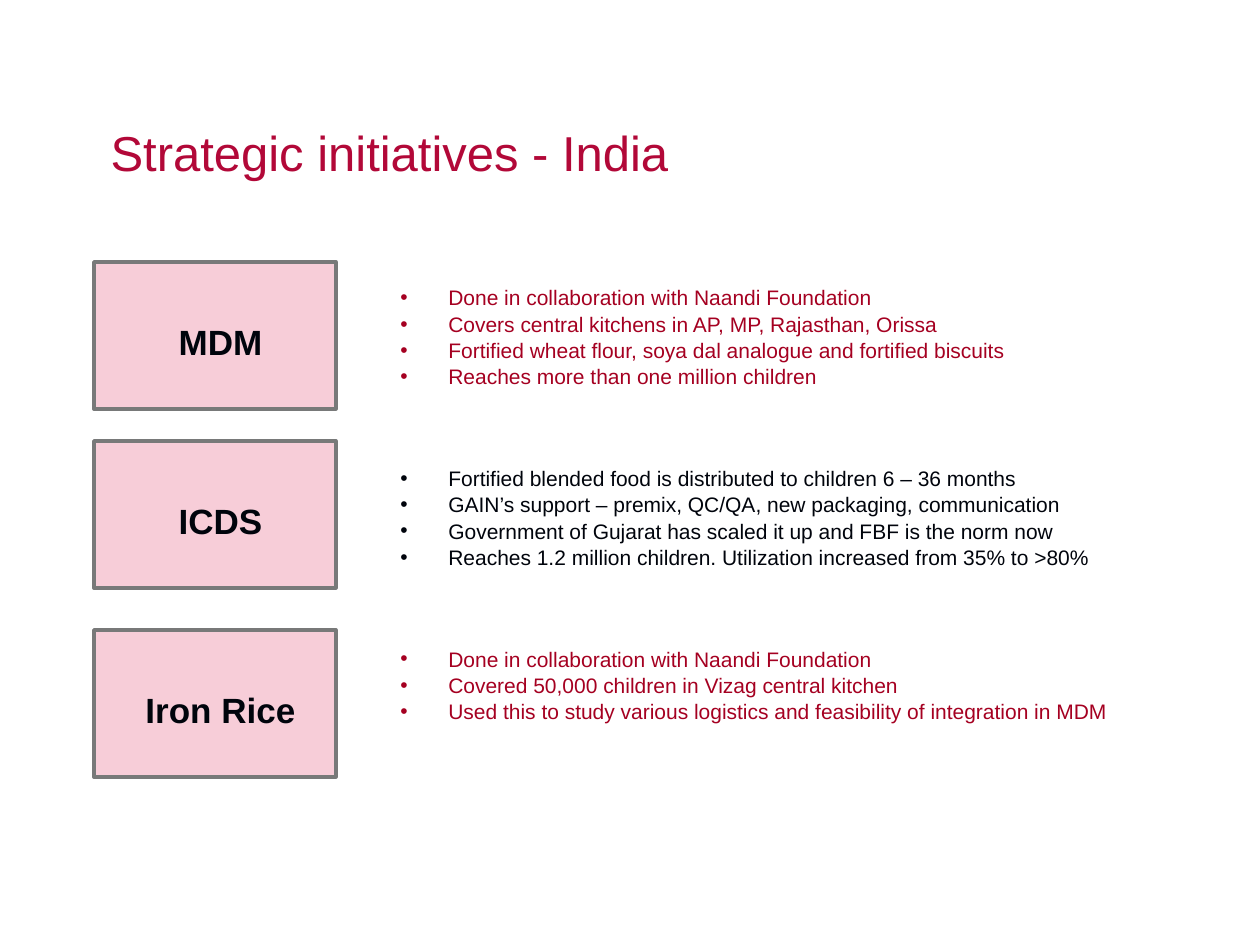
from dataclasses import dataclass

from lxml.etree import SubElement
from pptx import Presentation
from pptx.dml.color import RGBColor
from pptx.enum.shapes import MSO_SHAPE as Shape
from pptx.enum.text import MSO_ANCHOR as Anchor, PP_ALIGN as Align
from pptx.oxml.ns import qn
from pptx.util import Pt

PX = 914400 // 126
CRIMSON = RGBColor(0xB2, 0x08, 0x38)
RED = RGBColor(0xA5, 0x00, 0x21)
INK = RGBColor(0x00, 0x04, 0x0C)
PINK = RGBColor(0xF7, 0xCD, 0xD8)
GREY = RGBColor(0x78, 0x79, 0x79)

LABEL_OFFSET = 52
LINE_GAP = Pt(0.6)
GROUP_GAP = Pt(43.8)
INDENT = 48


@dataclass(frozen=True)
class Initiative:
    name: str
    top: int
    color: RGBColor
    points: tuple[str, ...]


INITIATIVES = (
    Initiative("MDM", 262, RED, (
        "Done in collaboration with Naandi Foundation",
        "Covers central kitchens in AP, MP, Rajasthan, Orissa",
        "Fortified wheat flour, soya dal analogue and fortified biscuits",
        "Reaches more than one million children",
    )),
    Initiative("ICDS", 441, INK, (
        "Fortified blended food is distributed to children 6 – 36 months",
        "GAIN’s support – premix, QC/QA, new packaging, communication",
        "Government of Gujarat has scaled it up and FBF is the norm now",
        "Reaches 1.2 million children. Utilization increased from 35% to >80%",
    )),
    Initiative("Iron Rice", 630, RED, (
        "Done in collaboration with Naandi Foundation",
        "Covered 50,000 children in Vizag central kitchen",
        "Used this to study various logistics and feasibility of integration in MDM",
    )),
)


def px(*values: int) -> list[int]:
    return [v * PX for v in values]


def add_run(p, text: str, size: int, color: RGBColor, bold: bool = False) -> None:
    r = p.add_run()
    r.text = text
    r.font.color.rgb = color
    for key, value in {"name": "Arial", "size": Pt(size), "bold": bold}.items():
        setattr(r.font, key, value)


def add_title(s, text: str) -> None:
    sp = s.shapes.title
    sp.left, sp.top, sp.width, sp.height = px(98, 118, 738, 67)
    tf = sp.text_frame
    tf.vertical_anchor = Anchor.MIDDLE
    p = tf.paragraphs[0]
    p.alignment = Align.LEFT
    add_run(p, text, 28, CRIMSON)


def add_textbox(s, left: int, top: int, width: int, height: int):
    tf = s.shapes.add_textbox(*px(left, top, width, height)).text_frame
    tf.word_wrap = True
    return tf


def add_box(s, item: Initiative) -> None:
    sp = s.shapes.add_shape(Shape.RECTANGLE, *px(94, item.top, 242, 147))
    sp.shadow.inherit = False
    sp.fill.solid()
    sp.fill.fore_color.rgb = PINK
    sp.line.color.rgb = GREY
    sp.line.width = Pt(2)


def add_label(s, item: Initiative) -> None:
    p = add_textbox(s, 126, item.top + LABEL_OFFSET, 189, 55).paragraphs[0]
    p.alignment = Align.CENTER
    add_run(p, item.name, 20, INK, bold=True)


def add_points(s, items: tuple[Initiative, ...]) -> None:
    tf = add_textbox(s, 388, 252, 743, 539)
    tf.margin_top = 33 * PX
    for i, item in enumerate(items):
        for j, text in enumerate(item.points):
            first = i == j == 0
            p = tf.paragraphs[0] if first else tf.add_paragraph()
            if not first:
                p.space_before = LINE_GAP if j else GROUP_GAP
            pPr = p._p.get_or_add_pPr()
            pPr.set("marL", str(INDENT * PX))
            pPr.set("indent", str(-INDENT * PX))
            SubElement(pPr, qn("a:buFont"), typeface="Arial")
            SubElement(pPr, qn("a:buChar"), char="•")
            add_run(p, text, 12, item.color)


def main() -> None:
    prs = Presentation()
    prs.slide_width, prs.slide_height = px(1260, 945)
    s = prs.slides.add_slide(prs.slide_layouts[5])
    add_title(s, "Strategic initiatives - India")
    add_points(s, INITIATIVES)
    for item in INITIATIVES:
        add_box(s, item)
        add_label(s, item)
    prs.save("out.pptx")


if __name__ == "__main__":
    main()
